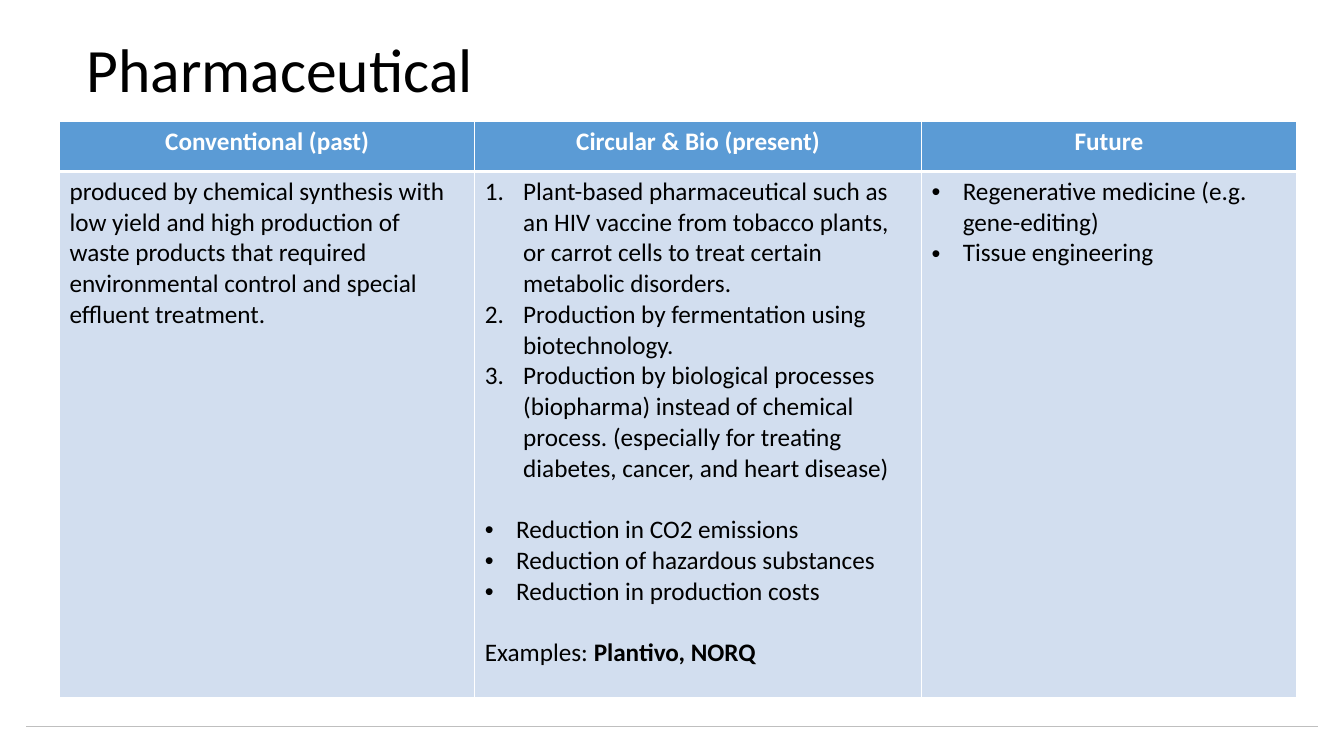
from dataclasses import dataclass

from lxml import etree
from pptx import Presentation
from pptx.dml.color import RGBColor
from pptx.enum.shapes import MSO_CONNECTOR
from pptx.enum.text import MSO_ANCHOR, PP_ALIGN
from pptx.oxml.ns import qn
from pptx.util import Emu, Inches, Pt

STRAIGHT = MSO_CONNECTOR.STRAIGHT
MIDDLE = MSO_ANCHOR.MIDDLE
CENTER = PP_ALIGN.CENTER

BLACK = RGBColor(0x00, 0x00, 0x00)
WHITE = RGBColor(0xFF, 0xFF, 0xFF)
HEADER_BLUE = RGBColor(0x5B, 0x9B, 0xD5)
BODY_BLUE = RGBColor(0xD2, 0xDE, 0xEF)
RULE_GREY = RGBColor(0xBF, 0xBF, 0xBF)

FONT = "Calibri"
BODY_SIZE = Pt(18)
BLANK_LINE = Pt(22)
THIN, THICK = Pt(1), Pt(3)
SLIDE_WIDTH, SLIDE_HEIGHT = Inches(13.33), Inches(7.5)


@dataclass(frozen=True)
class ListStyle:
    tag: str
    attribute: str
    value: str
    indent: Emu


NUMBERED = ListStyle("a:buAutoNum", "type", "arabicPeriod", Inches(0.38))
BULLETED = ListStyle("a:buChar", "char", "•", Inches(0.31))


@dataclass(frozen=True)
class Item:
    text: str
    style: ListStyle | None = None
    bold_ending: str = ""
    gap_before: bool = False


@dataclass(frozen=True)
class Era:
    heading: str
    width: float  # percent of the slide's width
    items: tuple[Item, ...]


ERAS = (
    Era("Conventional (past)", 30.9, (
        Item("produced by chemical synthesis with low yield and high production of "
             "waste products that required environmental control and special "
             "effluent treatment."),
    )),
    Era("Circular & Bio (present)", 33.23, (
        Item("Plant-based pharmaceutical such as an HIV vaccine from tobacco plants, "
             "or carrot cells to treat certain metabolic disorders.", NUMBERED),
        Item("Production by fermentation using biotechnology.", NUMBERED),
        Item("Production by biological processes (biopharma) instead of chemical "
             "process. (especially for treating diabetes, cancer, and heart disease)",
             NUMBERED),
        Item("Reduction in CO2 emissions", BULLETED, gap_before=True),
        Item("Reduction of hazardous substances", BULLETED),
        Item("Reduction in production costs", BULLETED),
        Item("Examples: ", bold_ending="Plantivo, NORQ", gap_before=True),
    )),
    Era("Future", 27.9, (
        Item("Regenerative medicine (e.g. gene-editing)", BULLETED),
        Item("Tissue engineering", BULLETED),
    )),
)
ROW_HEIGHTS = (6.67, 69.6)  # percent of the slide's height


def across(percent: float) -> Emu:
    return Emu(round(SLIDE_WIDTH * percent / 100))


def down(percent: float) -> Emu:
    return Emu(round(SLIDE_HEIGHT * percent / 100))


def set_font(paragraph, size: Pt, color: RGBColor, bold: bool | None = False) -> None:
    font = paragraph.font
    font.name, font.size, font.bold = FONT, size, bold
    font.color.rgb = color


def paint_cell(cell, fill: RGBColor, top: Pt, bottom: Pt) -> None:
    cell.fill.solid()
    cell.fill.fore_color.rgb = fill
    properties = cell._tc.get_or_add_tcPr()
    edges = (("L", THIN), ("R", THIN), ("T", top), ("B", bottom))
    for position, (side, width) in enumerate(edges):
        edge = etree.Element(qn(f"a:ln{side}"), w=str(width))
        solid = etree.SubElement(edge, qn("a:solidFill"))
        etree.SubElement(solid, qn("a:srgbClr"), val=str(WHITE))
        properties.insert(position, edge)


def write_item(paragraph, item: Item) -> None:
    if item.gap_before:
        paragraph.space_before = BLANK_LINE
    if item.style:
        properties = paragraph._p.get_or_add_pPr()
        properties.set("marL", str(item.style.indent))
        properties.set("indent", str(-item.style.indent))
        if item.style is BULLETED:
            etree.SubElement(properties, qn("a:buFont"), typeface="Arial")
        marker = etree.SubElement(properties, qn(item.style.tag))
        marker.set(item.style.attribute, item.style.value)
    set_font(paragraph, BODY_SIZE, BLACK)
    paragraph.add_run().text = item.text
    if item.bold_ending:
        ending = paragraph.add_run()
        ending.text = item.bold_ending
        ending.font.bold = True


def add_title(slide, text: str) -> None:
    title = slide.shapes.add_textbox(across(5.7), down(1.33), across(90), down(16.67))
    frame = title.text_frame
    frame.word_wrap = True
    frame.vertical_anchor = MIDDLE
    heading = frame.paragraphs[0]
    heading.text = text
    heading.line_spacing = 0.9
    set_font(heading, Pt(44), BLACK)


def add_footer_rule(slide) -> None:
    rule = slide.shapes.add_connector(
        STRAIGHT, across(1.95), down(96.13), across(98.05), down(96.13))
    rule.line.color.rgb = RULE_GREY
    rule.line.width = THIN
    etree.SubElement(rule._element.spPr, qn("a:effectLst"))


def add_era_table(slide) -> None:
    table = slide.shapes.add_table(
        len(ROW_HEIGHTS), len(ERAS), across(4.43), down(16),
        across(sum(era.width for era in ERAS)), down(sum(ROW_HEIGHTS))).table
    for row, height in zip(table.rows, ROW_HEIGHTS):
        row.height = down(height)
    for column, era in enumerate(ERAS):
        table.columns[column].width = across(era.width)

        # Heading
        header = table.cell(0, column)
        paint_cell(header, HEADER_BLUE, THIN, THICK)
        heading = header.text_frame.paragraphs[0]
        heading.text = era.heading
        heading.alignment = CENTER
        set_font(heading, BODY_SIZE, WHITE, True)

        # Details
        body = table.cell(1, column)
        paint_cell(body, BODY_BLUE, THICK, THIN)
        frame = body.text_frame
        for index, item in enumerate(era.items):
            write_item(frame.add_paragraph() if index else frame.paragraphs[0], item)


def main() -> None:
    deck = Presentation()
    deck.slide_width, deck.slide_height = SLIDE_WIDTH, SLIDE_HEIGHT
    slide = deck.slides.add_slide(deck.slide_layouts[6])
    add_footer_rule(slide)
    add_title(slide, "Pharmaceutical")
    add_era_table(slide)
    deck.save("out.pptx")


if __name__ == "__main__":
    main()
